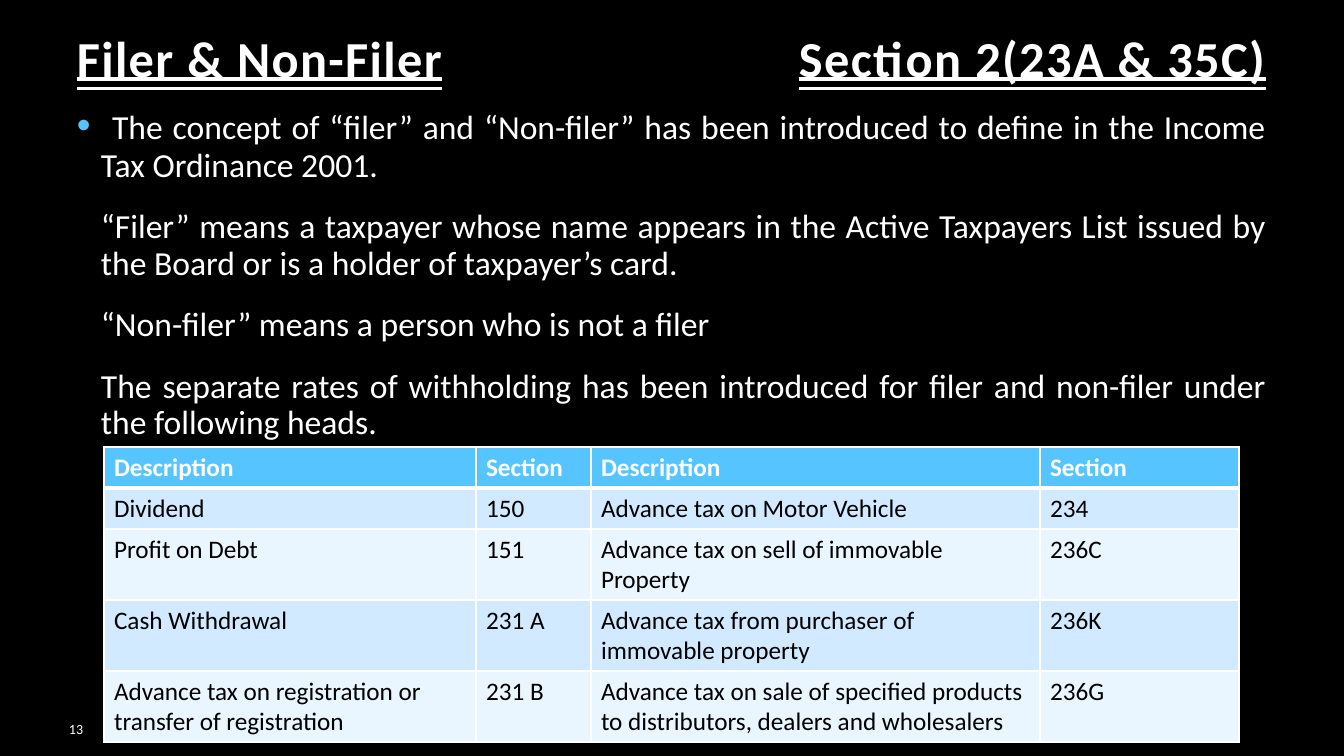
from lxml.etree import SubElement
from pptx import Presentation
from pptx.dml.color import RGBColor as Rgb
from pptx.enum.text import MSO_ANCHOR as Anchor, MSO_UNDERLINE as Underline, PP_ALIGN as Align
from pptx.oxml.ns import qn
from pptx.util import Pt

EMU_PER_PX = 12192000 / 1344
COLORS = {
    "background": "000000",
    "light": "FFFFFF",
    "dark": "000000",
    "accent": "56C5FF",
    "band_odd": "D1EAFF",
    "band_even": "E9F5FF",
}


def px(length):
    return round(length * EMU_PER_PX)


def color(name):
    return Rgb.from_string(COLORS[name])


class SlideBuilder:
    font_name = "Calibri"

    def __init__(self, deck):
        self.page = deck.slides.add_slide(deck.slide_layouts[6])
        fill = self.page.background.fill
        fill.solid()
        fill.fore_color.rgb = color("background")

    def style(self, font, size, color_name="light", bold=False):
        font.name = self.font_name
        font.size = Pt(size)
        font.bold = bold
        font.color.rgb = color(color_name)

    def text_box(self, left, top, width, height, anchor):
        box = self.page.shapes.add_textbox(px(left), px(top), px(width), px(height))
        frame = box.text_frame
        frame.word_wrap = True
        frame.vertical_anchor = anchor
        return frame

    def heading(self, text, left, width):
        frame = self.text_box(left, -58, width, 151, Anchor.BOTTOM)
        frame.text = text
        para = frame.paragraphs[0]
        para.line_spacing = 0.9
        span = para.runs[0]
        self.style(span.font, 36, bold=True)
        span.font.underline = Underline.DOUBLE_LINE
        span._r.get_or_add_rPr().set("spc", "100")

    def body(self, texts, left, top, width, height):
        frame = self.text_box(left, top, width, height, Anchor.TOP)
        for index, text in enumerate(texts):
            para = frame.paragraphs[0] if index == 0 else frame.add_paragraph()
            para.alignment = Align.JUSTIFY
            para.line_spacing = 0.9
            para.space_before = Pt(18 if index else 0)
            props = para._p.get_or_add_pPr()
            props.set("marL", str(px(24)))
            props.set("indent", str(0 if index else -px(24)))
            if index == 0:
                self.bullet(props)
                gap = para.add_run()
                gap.text = " "
                self.style(gap.font, 28)
            span = para.add_run()
            span.text = text
            self.style(span.font, 24)

    def bullet(self, props):
        tint = SubElement(props, qn("a:buClr"))
        SubElement(tint, qn("a:srgbClr"), val=COLORS["accent"])
        SubElement(props, qn("a:buFont"), typeface="Arial")
        SubElement(props, qn("a:buChar"), char="•")

    def page_number(self, text, left, top, width, height):
        frame = self.text_box(left, top, width, height, Anchor.MIDDLE)
        frame.text = text
        para = frame.paragraphs[0]
        para.alignment = Align.RIGHT
        self.style(para.runs[0].font, 10)

    def table(self, rows, left, top, widths, heights):
        frame = self.page.shapes.add_table(
            len(rows), len(widths), px(left), px(top), px(sum(widths)), px(sum(heights)))
        grid = frame.table
        for column, width in zip(grid.columns, widths):
            column.width = px(width)
        for number, (row, height, texts) in enumerate(zip(grid.rows, heights, rows)):
            row.height = px(height)
            band = "band_odd" if number % 2 else "band_even"
            for cell, text in zip(row.cells, texts):
                cell.text = text
                self.borders(cell, top=3 if number == 1 else 1, bottom=1 if number else 3)
                cell.fill.solid()
                cell.fill.fore_color.rgb = color(band if number else "accent")
                font = cell.text_frame.paragraphs[0].runs[0].font
                self.style(font, 18, "dark" if number else "light", bold=number == 0)

    def borders(self, cell, top, bottom):
        props = cell._tc.get_or_add_tcPr()
        for side, weight in (("lnL", 1), ("lnR", 1), ("lnT", top), ("lnB", bottom)):
            line = SubElement(props, qn(f"a:{side}"), w=str(Pt(weight)))
            fill = SubElement(line, qn("a:solidFill"))
            SubElement(fill, qn("a:srgbClr"), val=COLORS["light"])


def main():
    deck = Presentation()
    deck.slide_width, deck.slide_height = px(1344), px(756)
    slide = SlideBuilder(deck)

    # Headings
    slide.heading("Filer & Non-Filer", 67, 1008)
    slide.heading("Section 2(23A & 35C)", 789, 537)

    # Definitions
    slide.body([
        "The concept of “filer” and “Non-filer” has been introduced to define in the "
        "Income Tax Ordinance 2001.",
        "“Filer” means a taxpayer whose name appears in the Active Taxpayers List issued "
        "by the Board or is a holder of taxpayer’s card.",
        "“Non-filer” means a person who is not a filer",
        "The separate rates of withholding has been introduced for filer and non-filer "
        "under the following heads.",
    ], 67, 101, 1209, 537)

    slide.page_number("13", 0, 714, 93, 30)

    # Withholding heads
    slide.table([
        ("Description", "Section", "Description", "Section"),
        ("Dividend", "150", "Advance tax on Motor Vehicle", "234"),
        ("Profit on Debt", "151", "Advance tax on sell of immovable Property", "236C"),
        ("Cash Withdrawal", "231 A", "Advance tax from purchaser of immovable property", "236K"),
        ("Advance tax on registration or transfer of registration", "231 B",
         "Advance tax on sale of specified products to distributors, dealers and wholesalers",
         "236G"),
    ], 104, 447, (372, 115, 449, 199), (41, 41, 71, 71, 71))

    deck.save("out.pptx")


if __name__ == "__main__":
    main()
